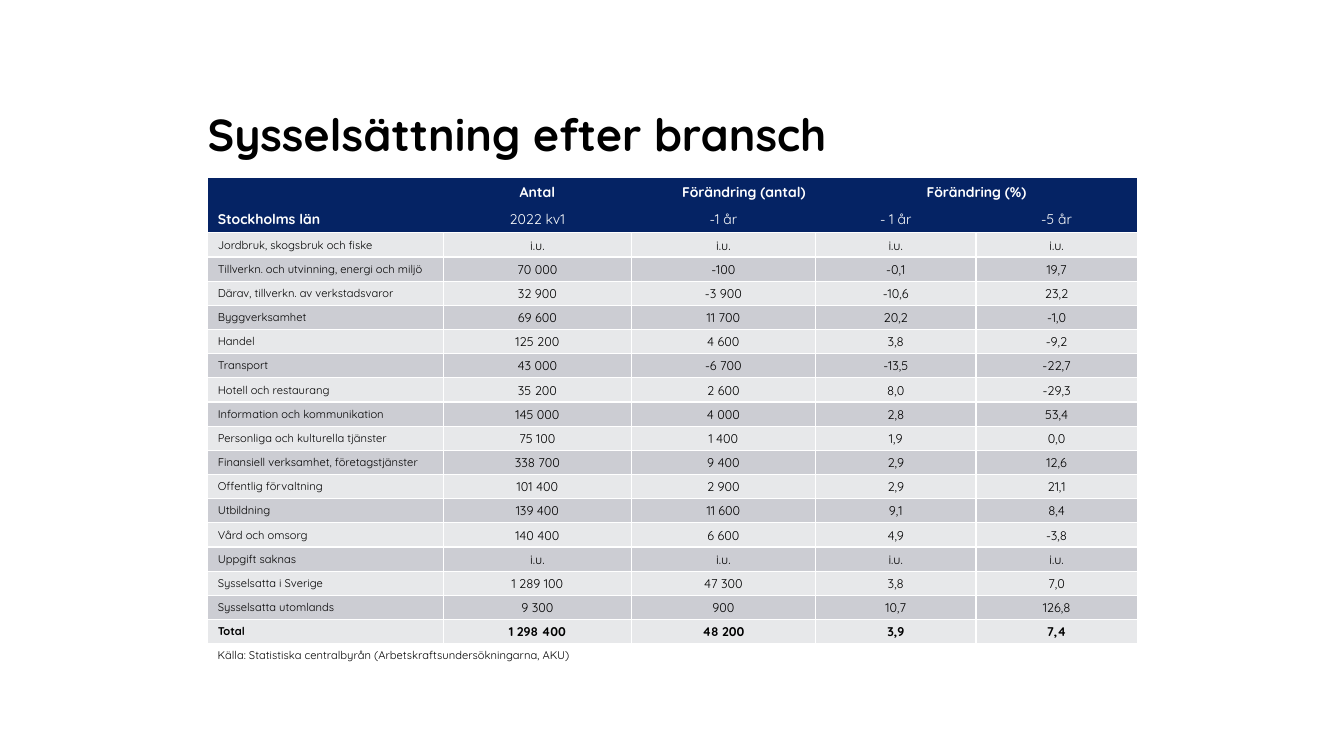
from lxml import etree
from pptx import Presentation
from pptx import util as u
from pptx.dml.color import RGBColor
from pptx.enum import text
from pptx.oxml.ns import qn

FONT = "Quicksand"
NAVY, BLACK, WHITE = "052364", "000000", "FFFFFF"
BANDS = ["E7E8EA", "CCCDD3"]
COLUMNS = [2.34, 1.86, 1.83, 1.59, 1.6]
HEADER_HEIGHT, ROW_HEIGHT = 0.27, 0.24
LEFT, TABLE_TOP, WIDTH = 2.06, 1.77, sum(COLUMNS)

ROWS = [
    ["", "Antal", "Förändring (antal)", "Förändring (%)", ""],
    ["Stockholms län", "2022 kv1", "-1 år", "- 1 år", "-5 år"],
    ["Jordbruk, skogsbruk och fiske", "i.u.", "i.u.", "i.u.", "i.u."],
    ["Tillverkn. och utvinning, energi och miljö", "70 000", "-100", "-0,1", "19,7"],
    ["Därav, tillverkn. av verkstadsvaror", "32 900", "-3 900", "-10,6", "23,2"],
    ["Byggverksamhet", "69 600", "11 700", "20,2", "-1,0"],
    ["Handel", "125 200", "4 600", "3,8", "-9,2"],
    ["Transport", "43 000", "-6 700", "-13,5", "-22,7"],
    ["Hotell och restaurang", "35 200", "2 600", "8,0", "-29,3"],
    ["Information och kommunikation", "145 000", "4 000", "2,8", "53,4"],
    ["Personliga och kulturella tjänster", "75 100", "1 400", "1,9", "0,0"],
    ["Finansiell verksamhet, företagstjänster", "338 700", "9 400", "2,9", "12,6"],
    ["Offentlig förvaltning", "101 400", "2 900", "2,9", "21,1"],
    ["Utbildning", "139 400", "11 600", "9,1", "8,4"],
    ["Vård och omsorg", "140 400", "6 600", "4,9", "-3,8"],
    ["Uppgift saknas", "i.u.", "i.u.", "i.u.", "i.u."],
    ["Sysselsatta i Sverige", "1 289 100", "47 300", "3,8", "7,0"],
    ["Sysselsatta utomlands", "9 300", "900", "10,7", "126,8"],
    ["Total", "1 298 400", "48 200", "3,9", "7,4"],
]


def write(paragraph, words, size, color, bold=False):
    if words:
        paragraph.add_run().text = words
    paragraph.font.name = FONT
    paragraph.font.size = u.Pt(size)
    paragraph.font.bold = bold
    paragraph.font.color.rgb = RGBColor.from_string(color)


def set_borders(cell, color=None):
    properties = cell._tc.get_or_add_tcPr()
    for side in ("lnL", "lnR", "lnT", "lnB"):
        line = etree.SubElement(properties, qn(f"a:{side}"), w=str(u.Pt(1)))
        if color:
            fill = etree.SubElement(line, qn("a:solidFill"))
            etree.SubElement(fill, qn("a:srgbClr"), val=color)
        else:
            etree.SubElement(line, qn("a:noFill"))


presentation = Presentation()
presentation.slide_width, presentation.slide_height = u.Inches(13.33), u.Inches(7.5)
slide = presentation.slides.add_slide(presentation.slide_layouts[6])

title = slide.shapes.add_textbox(u.Inches(LEFT), u.Inches(0.37), u.Inches(WIDTH), u.Inches(1.22))
frame = title.text_frame
frame.word_wrap = True
frame.vertical_anchor = text.MSO_ANCHOR.BOTTOM
frame.margin_left = frame.margin_right = frame.margin_top = frame.margin_bottom = 0
write(frame.paragraphs[0], "Sysselsättning efter bransch", 32, BLACK, True)

table_height = 2 * HEADER_HEIGHT + (len(ROWS) - 2) * ROW_HEIGHT
table = slide.shapes.add_table(
    len(ROWS), len(COLUMNS), u.Inches(LEFT), u.Inches(TABLE_TOP),
    u.Inches(WIDTH), u.Inches(table_height)).table
for column, width in zip(table.columns, COLUMNS):
    column.width = u.Inches(width)

for row_index, values in enumerate(ROWS):
    header = row_index < 2
    table.rows[row_index].height = u.Inches(HEADER_HEIGHT if header else ROW_HEIGHT)
    for column_index, words in enumerate(values):
        cell = table.cell(row_index, column_index)
        set_borders(cell, None if header else WHITE)
        cell.fill.solid()
        cell.fill.fore_color.rgb = RGBColor.from_string(NAVY if header else BANDS[row_index % 2])
        paragraph = cell.text_frame.paragraphs[0]
        if column_index:
            paragraph.alignment = text.PP_ALIGN.CENTER
            if row_index:
                cell.vertical_anchor = text.MSO_ANCHOR.MIDDLE
                cell.margin_left = cell.margin_right = cell.margin_top = u.Inches(0.01)
                cell.margin_bottom = 0
        size = 10 if header else 9 if column_index else 8
        bold = row_index in (0, len(ROWS) - 1) or (header and column_index == 0)
        write(paragraph, words, size, WHITE if header else BLACK, bold)

table.cell(0, 2).text_frame.paragraphs[0].alignment = text.PP_ALIGN.RIGHT
table.cell(0, 3).merge(table.cell(0, 4))

source = slide.shapes.add_textbox(u.Inches(LEFT), u.Inches(6.38), u.Inches(3.8), u.Inches(0.24))
source.text_frame.word_wrap = False
write(source.text_frame.paragraphs[0],
      "Källa: Statistiska centralbyrån (Arbetskraftsundersökningarna, AKU)", 8, BLACK)

presentation.save("out.pptx")
